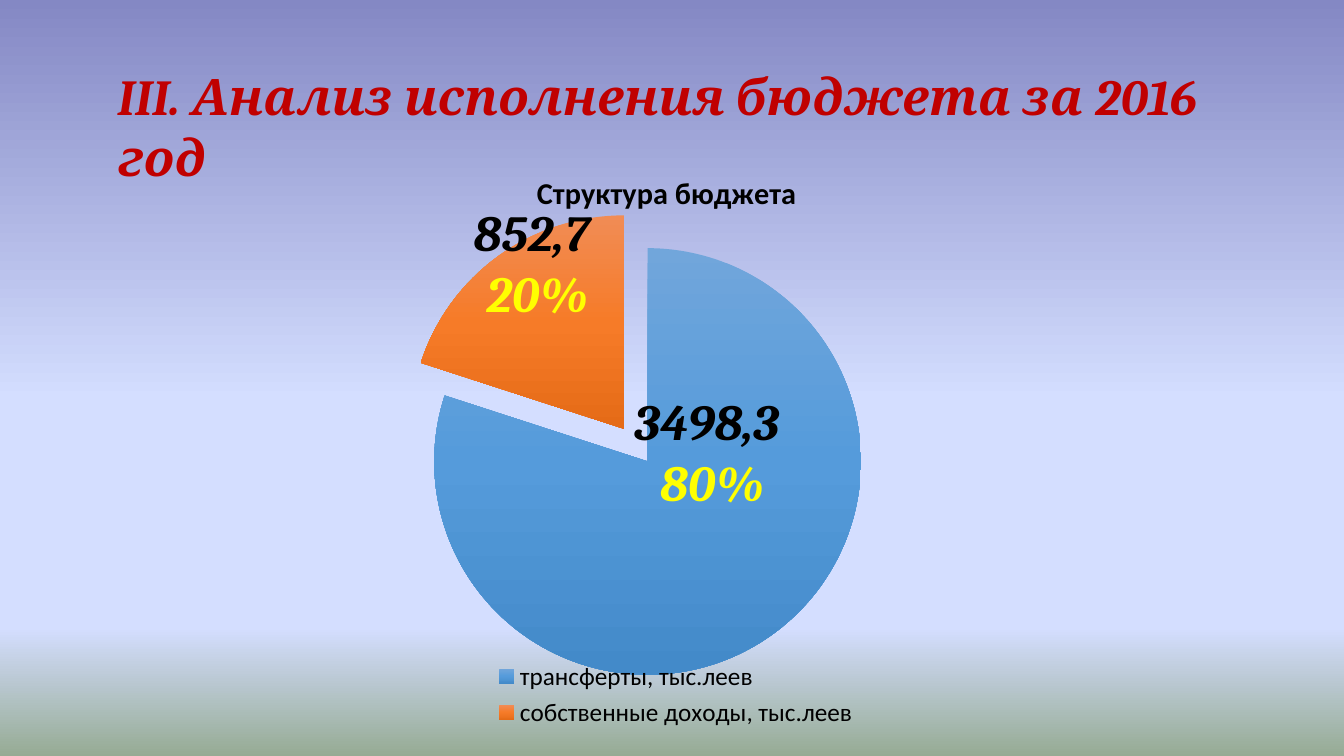
import pptx
import pptx.chart.data
import pptx.dml.color
import pptx.enum.chart
import pptx.enum.text
import pptx.oxml
import pptx.oxml.ns
import pptx.util

qn = pptx.oxml.ns.qn
NS = pptx.oxml.ns.nsdecls("a", "c")
WIDTH, HEIGHT = 13.33, 7.5


def color(value):
    return pptx.dml.color.RGBColor.from_string(value)


def gradient(fill_owner, fill, stops):
    """Top-to-bottom gradient from (percent, hex) stops."""
    fill.gradient()
    grad = next(fill_owner.iter(qn("a:gradFill")))
    gs_list = grad.find(qn("a:gsLst"))
    for gs in list(gs_list):
        gs_list.remove(gs)
    for percent, value in stops:
        gs_list.append(pptx.oxml.parse_xml(
            f'<a:gs {NS} pos="{percent * 1000}"><a:srgbClr val="{value}"/></a:gs>'))
    lin = grad.find(qn("a:lin"))
    lin.set("ang", "5400000")
    lin.set("scaled", "0")


def write(p, text, size=36, font="Cambria", fill="000000", bold=True, italic=True,
          align=pptx.enum.text.PP_ALIGN.CENTER):
    p.alignment = align
    r = p.add_run()
    r.text = text
    f = r.font
    f.size, f.name, f.bold, f.italic = pptx.util.Pt(size), font, bold, italic
    f.color.rgb = color(fill)


def place(element, x, y, w=None, h=None):
    """Manual layout in shares of the chart; the title takes no size."""
    for old in element.findall(qn("c:layout")):
        element.remove(old)
    parts = [("xMode", "edge"), ("yMode", "edge"), ("x", x), ("y", y), ("w", w), ("h", h)]
    inner = "".join(f'<c:{k} val="{v}"/>' for k, v in parts if v is not None)
    if element.tag == qn("c:plotArea"):
        inner = '<c:layoutTarget val="inner"/>' + inner
    layout = pptx.oxml.parse_xml(
        f"<c:layout {NS}><c:manualLayout>{inner}</c:manualLayout></c:layout>")
    before = {"plotArea": 0, "title": 1, "legend": 1}[element.tag.split("}")[1]]
    element.insert(before, layout)


class Deck:
    title_color = "C00000"
    share_color = "FFFF00"
    chart_font = "Calibri"

    def __init__(self):
        self.prs = pptx.Presentation()
        self.prs.slide_width = pptx.util.Inches(WIDTH)
        self.prs.slide_height = pptx.util.Inches(HEIGHT)
        self.s = self.prs.slides.add_slide(self.prs.slide_layouts[5])

    def box(self, x, y, w, h):
        """Shares of the slide's size to lengths."""
        return [pptx.util.Inches(v) for v in (x * WIDTH, y * HEIGHT, w * WIDTH, h * HEIGHT)]

    def background(self, stops):
        gradient(self.s.element, self.s.background.fill, stops)

    def title(self, text, *area):
        sp = self.s.shapes.title
        sp.left, sp.top, sp.width, sp.height = self.box(*area)
        tf = sp.text_frame
        tf.word_wrap = True
        tf.auto_size = pptx.enum.text.MSO_AUTO_SIZE.NONE
        tf.vertical_anchor = pptx.enum.text.MSO_ANCHOR.TOP
        write(tf.paragraphs[0], text, fill=self.title_color,
              align=pptx.enum.text.PP_ALIGN.LEFT)

    def label(self, amount, share, *area):
        tf = self.s.shapes.add_textbox(*self.box(*area)).text_frame
        tf.word_wrap = True
        write(tf.paragraphs[0], amount)
        write(tf.add_paragraph(), share, fill=self.share_color)

    def pie(self, name, slices, *area):
        """slices: (category, value, explosion, gradient colours)."""
        data = pptx.chart.data.CategoryChartData()
        data.categories = [item[0] for item in slices]
        data.add_series(name, [item[1] for item in slices])
        chart = self.s.shapes.add_chart(
            pptx.enum.chart.XL_CHART_TYPE.PIE, *self.box(*area), data).chart
        chart.font.size = pptx.util.Pt(18)
        chart.font.name = self.chart_font
        chart.font.color.rgb = color("000000")

        # Chart title and legend
        chart.has_title = True
        write(chart.chart_title.text_frame.paragraphs[0], name, size=21.6,
              font=self.chart_font, italic=False)
        chart.has_legend = True
        chart.legend.position = pptx.enum.chart.XL_LEGEND_POSITION.RIGHT
        chart.legend.include_in_layout = False

        # Slices
        plot = chart.plots[0]
        plot.vary_by_categories = True
        series = plot.series[0]
        for i, (_, _, explosion, colors) in enumerate(slices):
            fill = series.points[i].format.fill
            point = series._element.findall(qn("c:dPt"))[i]
            gradient(point, fill, zip((0, 50, 100), colors))
            point.find(qn("c:spPr")).addprevious(pptx.oxml.parse_xml(
                f'<c:explosion {NS} val="{explosion}"/>'))
        series._element.find(qn("c:dPt")).addprevious(pptx.oxml.parse_xml(
            f'<c:explosion {NS} val="26"/>'))

        # Layout inside the chart
        root = chart.element.find(qn("c:chart"))
        place(root.find(qn("c:title")), 0.39, 0.05)
        place(root.find(qn("c:plotArea")), 0.07, 0.04, 0.8, 0.9)
        place(root.find(qn("c:legend")), 0.35, 0.87, 0.33, 0.13)


def main():
    deck = Deck()
    deck.background([(0, "8488C4"), (53, "D4DEFF"), (83, "D4DEFF"), (100, "96AB94")])
    deck.title("III. Анализ исполнения бюджета за 2016 год", 0.08, 0.08, 0.88, 0.13)
    deck.pie("Структура бюджета", [
        ("трансферты, тыс.леев", 80, 19, ("71A6DB", "559BDB", "438AC9")),
        ("собственные доходы, тыс.леев", 20, 0, ("F18C55", "F67B28", "E56B17")),
    ], 0.06, 0.18, 0.86, 0.79)
    deck.label("3498,3 ", "80%", 0.37, 0.51, 0.32, 0.17)
    deck.label("852,7 ", "20%", 0.28, 0.26, 0.24, 0.17)
    deck.prs.save("out.pptx")


if __name__ == "__main__":
    main()
